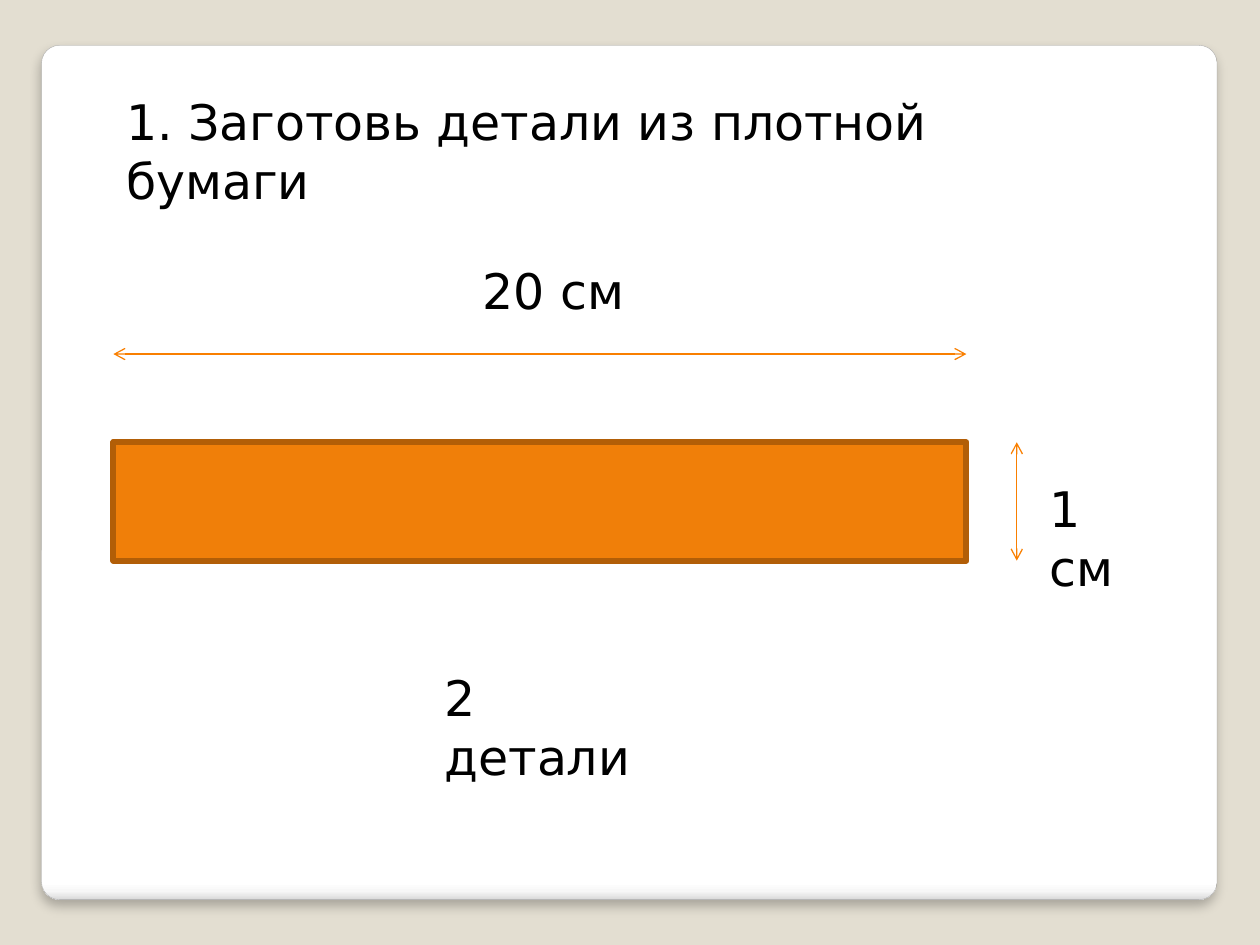
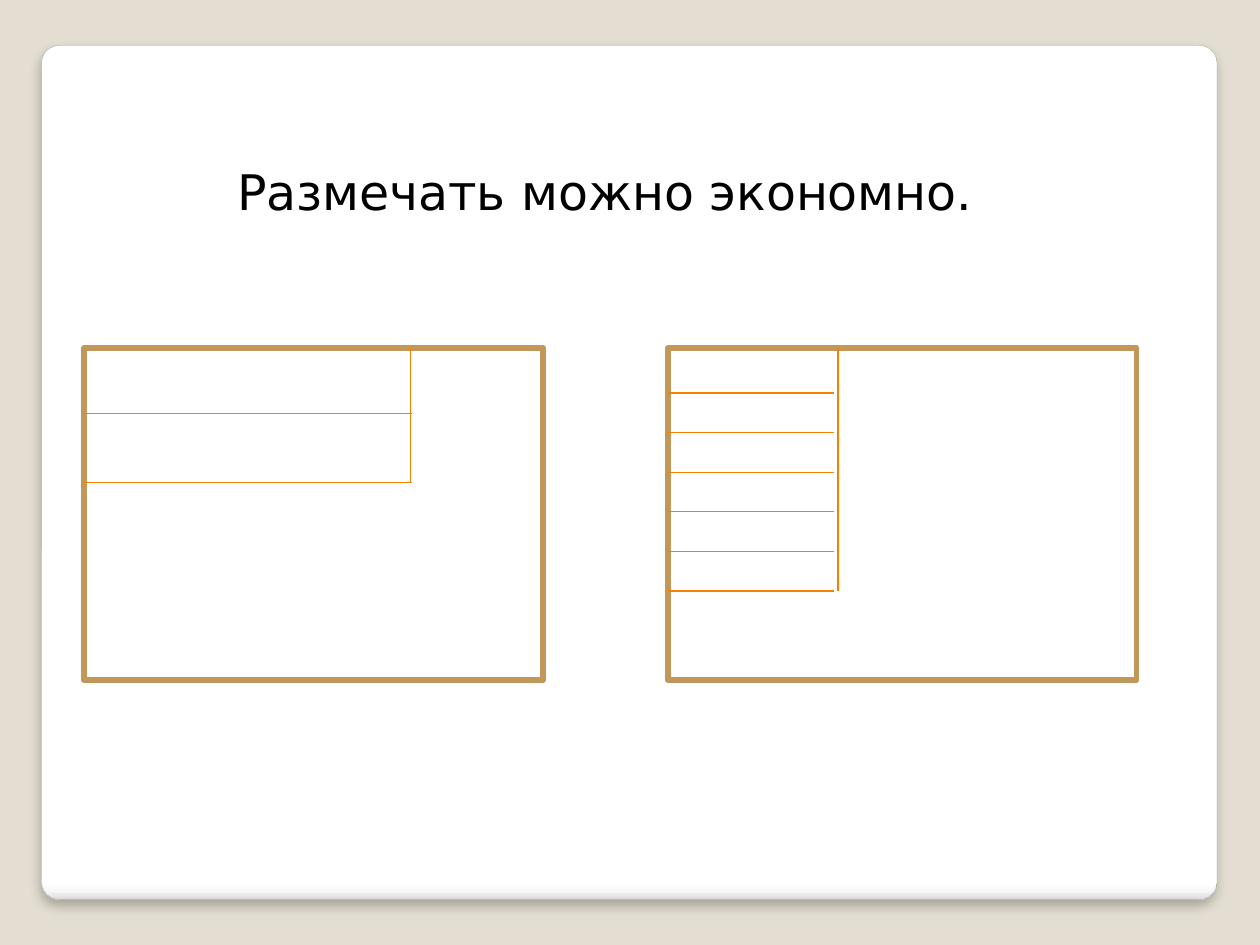
from lxml import etree
from pptx import Presentation
from pptx import util as u
from pptx.dml.color import RGBColor
from pptx.enum import shapes, text
from pptx.oxml.ns import qn

FONT, SIZE = "DejaVu Sans", 28
COL = {"back": "E3DED1", "edge": "A4A4A4", "text": "000000", "white": "FFFFFF",
       "strip": "F07F09", "rim": "B25E07", "rule": "F97F00", "sheet": "C19859"}
FADE = [(0, "FFFFFF"), (98, "FFFFFF"), (99, "F7F7F7"), (100, "DADADA")]
LEFT, MID = text.PP_ALIGN.LEFT, text.PP_ALIGN.CENTER
BOX = shapes.MSO_SHAPE.FLOWCHART_PROCESS

# Content: titles and labels as words, left, top, width, alignment
HEADS = [("1. Заготовь детали из плотной бумаги", 0.9, 0.68, 8.03, LEFT),
         ("Размечать можно экономно.", 0.98, 1.23, 7.64, MID)]
LABELS = [("20 см", 1.28, 2.02, 6.22, MID),
          ("1 см", 8.23, 3.75, 1.07, LEFT),
          ("2 детали", 3.43, 5.25, 1.99, LEFT)]
STRIP = (0.9, 3.51, 6.77, 0.94)

# Sheets: left, width, cut edge, row length, first row, last row, row count
TOP, TALL = 2.76, 2.64
SHEETS = [(0.67, 3.64, 3.26, 2.6, 3.28, 3.83, 2),
          (5.3, 3.72, 6.65, 1.32, 3.12, 4.69, 6)]


def rgb(name):
    return RGBColor.from_string(COL[name])


def inch(*nums):
    return [u.Inches(n) for n in nums]


def node(parent, tag, **attrs):
    return etree.SubElement(parent, qn(tag), attrs)


def write(shape, words, align):
    frame = shape.text_frame
    frame.word_wrap = True
    frame.auto_size = text.MSO_AUTO_SIZE.NONE
    frame.vertical_anchor = text.MSO_ANCHOR.TOP
    para = frame.paragraphs[0]
    para.text, para.alignment = words, align
    font = para.font
    font.name, font.size = FONT, u.Pt(SIZE)
    font.color.rgb = rgb("text")


def title(slide, words, left, top, width, align):
    head = slide.shapes.title
    head.left, head.top, head.width, head.height = inch(left, top, width, 0.57)
    write(head, words, align)


def label(slide, words, left, top, width, align):
    write(slide.shapes.add_textbox(*inch(left, top, width, 0.57)), words, align)


def block(slide, place, fill, edge):
    shape = slide.shapes.add_shape(BOX, *inch(*place))
    shape.shadow.inherit = False
    shape.fill.solid()
    shape.fill.fore_color.rgb = rgb(fill)
    shape.line.color.rgb = rgb(edge)
    shape.line.width = u.Pt(3.35)
    node(shape.element.spPr.find(qn("a:ln")), "a:round")


def rule(slide, *ends, arrows=False):
    line = slide.shapes.add_connector(shapes.MSO_CONNECTOR.STRAIGHT, *inch(*ends))
    line.line.color.rgb = rgb("rule")
    line.line.width = u.Pt(0.75)
    props = line.element.spPr
    if arrows:
        for tag in ("a:headEnd", "a:tailEnd"):
            node(props.find(qn("a:ln")), tag, type="arrow")
    node(props, "a:effectLst")


def panel(deck, slide):
    """Give the master its background and its rounded white card."""
    master = deck.slide_master
    master.background.fill.solid()
    master.background.fill.fore_color.rgb = rgb("back")
    card = slide.shapes.add_shape(shapes.MSO_SHAPE.ROUNDED_RECTANGLE,
                                  *inch(0.33, 0.36, 9.33, 6.78))
    card.adjustments[0] = 0.021
    card.fill.gradient()
    card.fill.gradient_angle = 270
    card.line.color.rgb = rgb("edge")
    card.line.width = u.Pt(0.16)
    card.shadow.inherit = False
    props = card.element.spPr
    # Four gradient stops and a soft shadow below
    stops = props.find(".//" + qn("a:gsLst"))
    for stop in list(stops):
        stops.remove(stop)
    for pos, tone in FADE:
        node(node(stops, "a:gs", pos=str(pos * 1000)), "a:srgbClr", val=tone)
    shade = node(props.find(qn("a:effectLst")), "a:outerShdw", blurRad=str(u.Pt(6)),
                 dist=str(u.Pt(4)), dir="5400000", algn="t", rotWithShape="0")
    node(node(shade, "a:srgbClr", val="000000"), "a:alpha", val="25000")
    # Move the card behind everything on the master
    card.element.find(".//" + qn("p:cNvPr")).set("id", "99")
    master.shapes.element.insert(2, card.element)


def main():
    deck = Presentation()
    deck.slide_width, deck.slide_height = inch(10, 7.5)
    slides = [deck.slides.add_slide(deck.slide_layouts[5]) for _ in HEADS]
    parts, marks = slides
    panel(deck, parts)
    for slide, head in zip(slides, HEADS):
        title(slide, *head)

    # Slide 1: the strip and its measures
    for item in LABELS:
        label(parts, *item)
    left, top, width, height = STRIP
    rule(parts, left, 2.81, left + width, 2.81, arrows=True)
    block(parts, STRIP, "strip", "rim")
    rule(parts, 8.07, top, 8.07, top + height, arrows=True)

    # Slide 2: two sheets with cutting lines
    for left, width, cut, reach, first, last, count in SHEETS:
        block(marks, (left, TOP, width, TALL), "white", "sheet")
        step = (last - first) / (count - 1)
        for row in range(count):
            y = first + row * step
            rule(marks, left, y, left + reach, y)
        rule(marks, cut, last, cut, TOP)

    deck.save("out.pptx")


if __name__ == "__main__":
    main()
